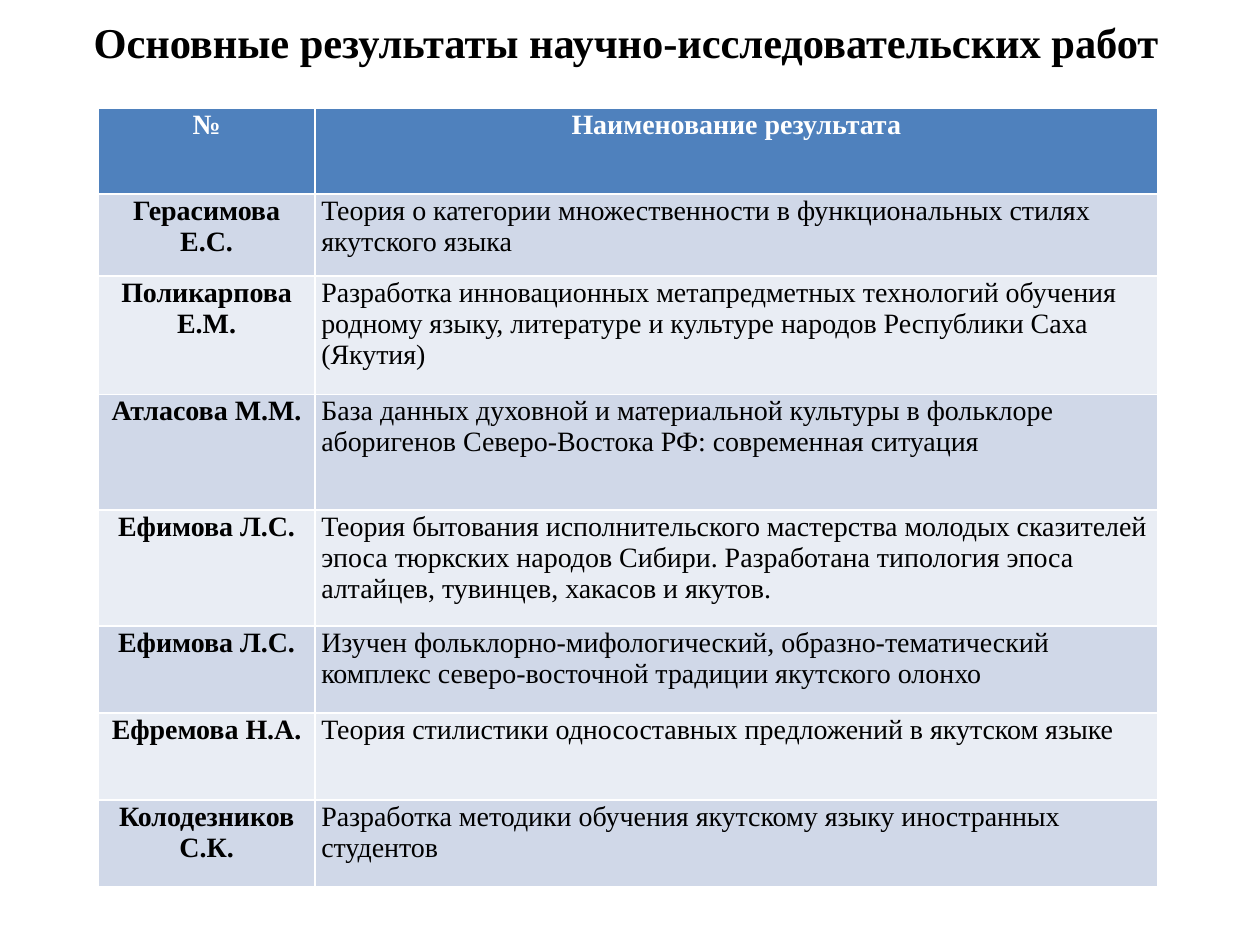
import pptx
import pptx.dml.color
import pptx.enum.text
import pptx.util

Inches = pptx.util.Inches
Align = pptx.enum.text.PP_ALIGN

TITLE = "Основные результаты научно-исследовательских работ"
HEAD = ("№", "Наименование результата")
ROWS = [
    ("Герасимова Е.С.", "Теория о категории множественности в функциональных стилях якутского языка", 0.65),
    ("Поликарпова Е.М.", "Разработка инновационных метапредметных технологий обучения родному языку, "
     "литературе и культуре народов Республики Саха (Якутия)", 0.94),
    ("Атласова М.М.", "База данных духовной и материальной культуры в фольклоре аборигенов "
     "Северо-Востока РФ: современная ситуация", 0.92),
    ("Ефимова Л.С.", "Теория бытования исполнительского мастерства молодых сказителей эпоса тюркских "
     "народов Сибири. Разработана типология эпоса алтайцев, тувинцев, хакасов и якутов.", 0.92),
    ("Ефимова Л.С.", "Изучен фольклорно-мифологический, образно-тематический комплекс "
     "северо-восточной традиции якутского олонхо", 0.69),
    ("Ефремова Н.А.", "Теория стилистики односоставных предложений в якутском языке", 0.69),
    ("Колодезников С.К.", "Разработка методики обучения якутскому языку иностранных студентов", 0.69),
]
COLS = (1.72, 6.69)
HEAD_HEIGHT = 0.68
HEAD_FILL = "4F81BD"
BANDS = ("D0D8E8", "E9EDF4")


def color(value):
    return pptx.dml.color.RGBColor.from_string(value)


def write(frame, text, size=16, bold=True, ink="000000", align=Align.CENTER):
    frame.word_wrap = True
    para = frame.paragraphs[0]
    para.alignment = align
    run = para.add_run()
    run.text = text
    run.font.name = "Times New Roman"
    run.font.size = pptx.util.Pt(size)
    run.font.bold = bold
    run.font.color.rgb = color(ink)


def style(cell, fill):
    cell.margin_left = cell.margin_right = Inches(0.05)
    cell.margin_top = cell.margin_bottom = Inches(0.01)
    cell.fill.solid()
    cell.fill.fore_color.rgb = color(fill)


def add_title(slide):
    box = slide.shapes.add_textbox(Inches(0.47), Inches(0.13), Inches(9), Inches(0.78))
    box.text_frame.margin_top = 0
    write(box.text_frame, TITLE, size=24.3)


def add_results(slide):
    height = HEAD_HEIGHT + sum(row[2] for row in ROWS)
    table = slide.shapes.add_table(
        len(ROWS) + 1, len(COLS), Inches(0.78), Inches(0.86),
        Inches(sum(COLS)), Inches(height)).table
    for col, width in zip(table.columns, COLS):
        col.width = Inches(width)
    table.rows[0].height = Inches(HEAD_HEIGHT)
    for num, text in enumerate(HEAD):
        cell = table.cell(0, num)
        style(cell, HEAD_FILL)
        write(cell.text_frame, text, ink="FFFFFF")
    for num, (name, result, height) in enumerate(ROWS, 1):
        table.rows[num].height = Inches(height)
        left, right = table.cell(num, 0), table.cell(num, 1)
        for cell in (left, right):
            style(cell, BANDS[(num - 1) % 2])
        write(left.text_frame, name)
        write(right.text_frame, result, bold=False, align=Align.LEFT)


def main():
    deck = pptx.Presentation()
    deck.slide_width, deck.slide_height = Inches(10), Inches(7.5)
    slide = deck.slides.add_slide(deck.slide_layouts[6])
    add_title(slide)
    add_results(slide)
    deck.save("out.pptx")


if __name__ == "__main__":
    main()
